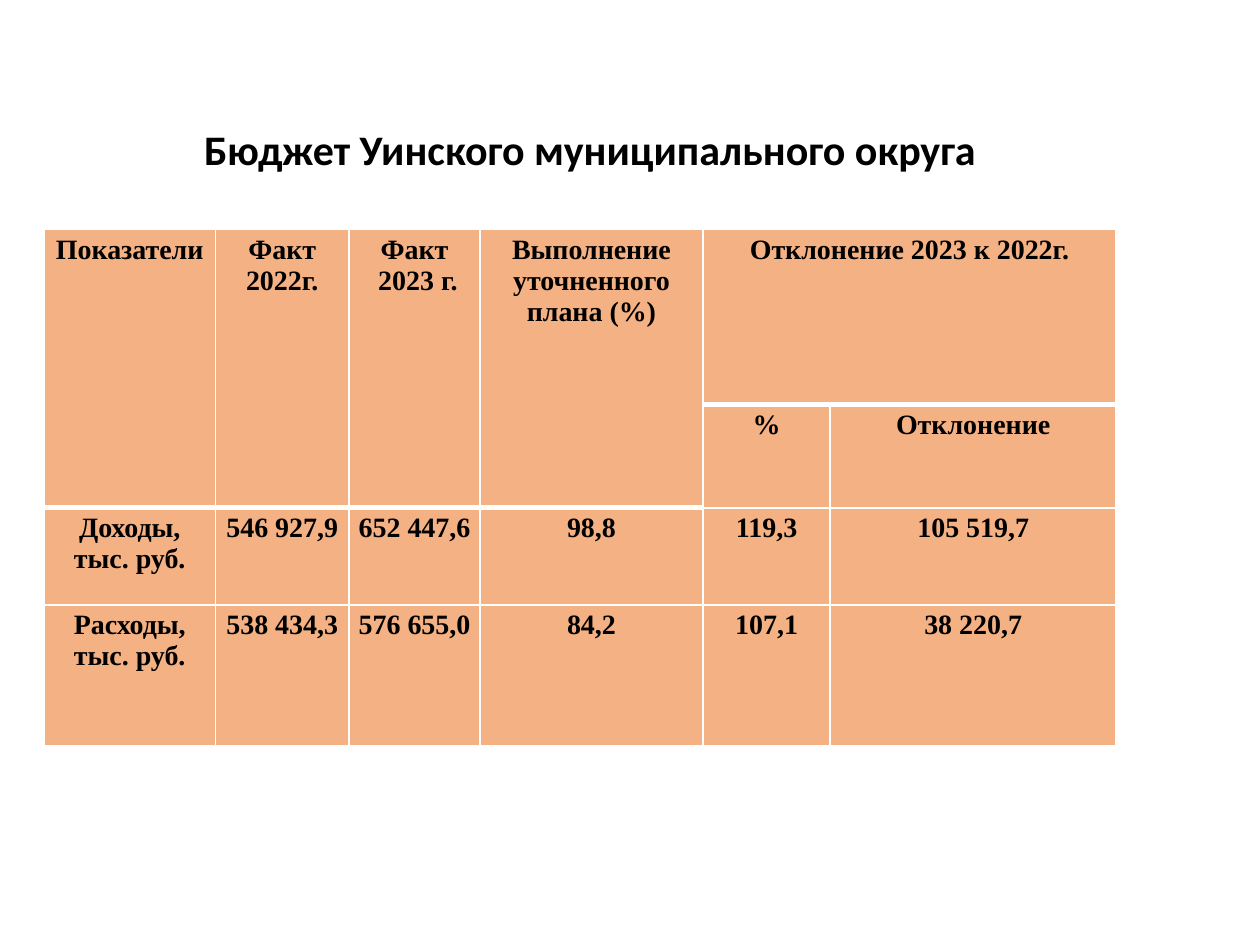
"""Build the slide with the budget table of a municipal district."""
from dataclasses import dataclass

from lxml import etree
from pptx import Presentation
from pptx.dml.color import RGBColor
from pptx.enum.text import MSO_ANCHOR, PP_ALIGN
from pptx.oxml.ns import qn
from pptx.util import Emu, Inches, Pt

LEFT, CENTER, MIDDLE = PP_ALIGN.LEFT, PP_ALIGN.CENTER, MSO_ANCHOR.MIDDLE
BLACK = RGBColor(0x00, 0x00, 0x00)
WHITE = RGBColor(0xFF, 0xFF, 0xFF)
PEACH = RGBColor(0xF4, 0xB1, 0x83)
SLIDE_WIDTH, SLIDE_HEIGHT = Inches(10), Inches(7.5)
COLUMN_SHARES = (13.6, 10.6, 10.4, 17.7, 10.1, 22.7)
ROW_SHARES = (18.53, 10.8, 10.27, 14.93)
HEADER_ROWS, MERGED_COLUMNS = 2, 4


@dataclass(frozen=True)
class Entry:
    """Text of a table cell with its grid place and span."""
    row: int
    column: int
    text: str
    rows: int = 1
    columns: int = 1


HEADINGS = (
    "Показатели",
    "Факт\n2022г.",
    "Факт\n 2023 г.",
    "Выполнение уточненного плана (%)",
)
FIGURES = (
    ("Доходы, тыс. руб.", "546 927,9", "652 447,6", "98,8", "119,3", "105 519,7"),
    ("Расходы, тыс. руб.", "538 434,3", "576 655,0", "84,2", "107,1", "38 220,7"),
)
ENTRIES = (
    *(Entry(0, column, text, rows=HEADER_ROWS) for column, text in enumerate(HEADINGS)),
    Entry(0, 4, "Отклонение 2023 к 2022г.", columns=2),
    Entry(1, 4, "%"),
    Entry(1, 5, "Отклонение"),
    *(Entry(row, column, text)
      for row, figures in enumerate(FIGURES, HEADER_ROWS)
      for column, text in enumerate(figures)),
)


def across(percent: float) -> Emu:
    """Return a share of the slide's width."""
    return Emu(round(SLIDE_WIDTH * percent / 100))


def down(percent: float) -> Emu:
    """Return a share of the slide's height."""
    return Emu(round(SLIDE_HEIGHT * percent / 100))


def write(frame, text: str, *, font: str, size: float, align, spacing: float = 1.0) -> None:
    """Fill a text frame with bold black paragraphs."""
    frame.text = text
    frame.word_wrap = True
    for paragraph in frame.paragraphs:
        paragraph.alignment = align
        paragraph.line_spacing = spacing
        for run in paragraph.runs:
            run.font.name = font
            run.font.size = Pt(size)
            run.font.bold = True
            run.font.color.rgb = BLACK


def edge_width(row_above: int, column: int) -> int:
    """Return the width of the line below a row: thick under the headings."""
    heading_end = HEADER_ROWS - 1 if column < MERGED_COLUMNS else 0
    return 3 if row_above == heading_end else 1


def style_cell(cell, row: int, column: int) -> None:
    """Give a cell its borders, fill and margins."""
    widths = {"a:lnL": 1, "a:lnR": 1, "a:lnT": edge_width(row - 1, column),
              "a:lnB": edge_width(row, column)}
    properties = cell._tc.get_or_add_tcPr()
    for tag, width in widths.items():
        line = etree.SubElement(properties, qn(tag), w=str(Pt(width)))
        fill = etree.SubElement(line, qn("a:solidFill"))
        etree.SubElement(fill, qn("a:srgbClr"), val=str(WHITE))
    cell.fill.solid()
    cell.fill.fore_color.rgb = PEACH
    cell.margin_left = cell.margin_right = Inches(0.07)
    cell.margin_top = cell.margin_bottom = Inches(0.04)


def add_title(slide) -> None:
    """Place and format the slide title."""
    title = slide.shapes.title
    title.left, title.top = across(6.9), down(5.33)
    title.width, title.height = across(86.2), down(19.33)
    frame = title.text_frame
    write(frame, "Бюджет Уинского муниципального округа",
          font="Calibri", size=24, align=LEFT, spacing=0.9)
    frame.vertical_anchor = MIDDLE
    frame.margin_left, frame.margin_top = across(9.3), down(2.8)


def add_budget(slide) -> None:
    """Draw the budget table."""
    budget = slide.shapes.add_table(
        len(ROW_SHARES), len(COLUMN_SHARES), across(3.5), down(24.27),
        across(sum(COLUMN_SHARES)), down(sum(ROW_SHARES))).table
    for column, share in zip(budget.columns, COLUMN_SHARES):
        column.width = across(share)
    for row, share in zip(budget.rows, ROW_SHARES):
        row.height = down(share)
    for row in range(len(ROW_SHARES)):
        for column in range(len(COLUMN_SHARES)):
            style_cell(budget.cell(row, column), row, column)
    for entry in ENTRIES:
        cell = budget.cell(entry.row, entry.column)
        if entry.rows * entry.columns > 1:
            cell.merge(budget.cell(entry.row + entry.rows - 1,
                                   entry.column + entry.columns - 1))
        write(cell.text_frame, entry.text, font="Times New Roman", size=16, align=CENTER)


def main() -> None:
    """Build and save the presentation."""
    deck = Presentation()
    deck.slide_width, deck.slide_height = SLIDE_WIDTH, SLIDE_HEIGHT
    slide = deck.slides.add_slide(deck.slide_layouts.get_by_name("Title Only"))
    add_title(slide)
    add_budget(slide)
    deck.save("out.pptx")


if __name__ == "__main__":
    main()
